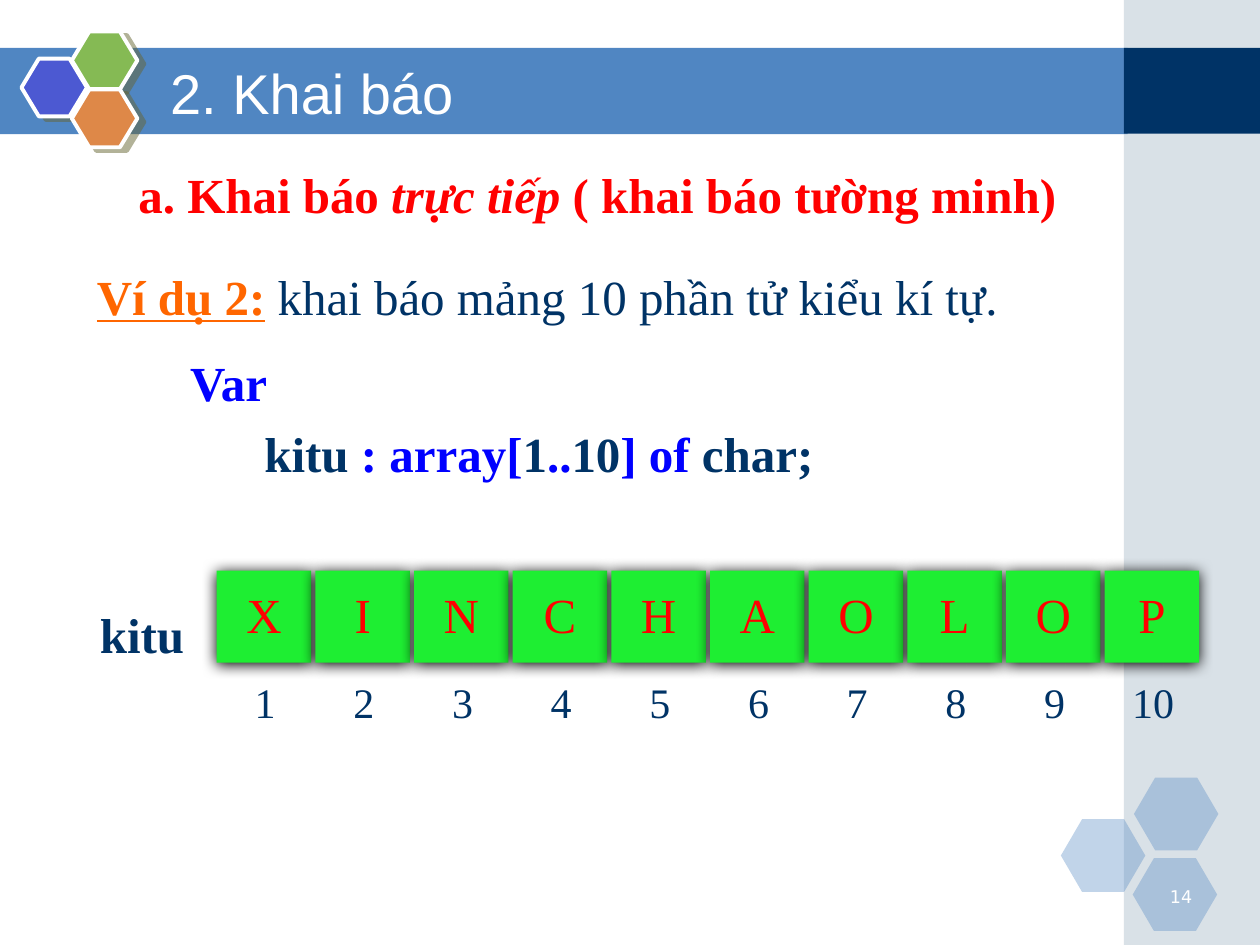
"""Build the slide on direct declaration of a character array."""
from lxml import etree
from pptx import Presentation
from pptx.dml.color import RGBColor
from pptx.enum.shapes import MSO_SHAPE
from pptx.enum.text import MSO_ANCHOR, PP_ALIGN
from pptx.oxml.ns import qn
from pptx.util import Inches, Pt

RECT, HEXAGON, ARROW = MSO_SHAPE.RECTANGLE, MSO_SHAPE.HEXAGON, MSO_SHAPE.RIGHT_ARROW
LEFT, CENTER, RIGHT = PP_ALIGN.LEFT, PP_ALIGN.CENTER, PP_ALIGN.RIGHT
TOP, MIDDLE = MSO_ANCHOR.TOP, MSO_ANCHOR.MIDDLE

WIDTH, HEIGHT = Inches(10), Inches(7.5)
WHITE = RGBColor(0xFF, 0xFF, 0xFF)
NAVY = RGBColor(0x00, 0x33, 0x66)
STEEL = RGBColor(0x50, 0x86, 0xC2)
MIST = RGBColor(0xA0, 0xB5, 0xC4)
INDIGO = RGBColor(0x4C, 0x59, 0xD2)
LEAF = RGBColor(0x85, 0xBA, 0x54)
COPPER = RGBColor(0xDE, 0x88, 0x48)
GREEN = RGBColor(0x1E, 0xEE, 0x32)
RED = RGBColor(0xFF, 0x00, 0x00)
BLUE = RGBColor(0x00, 0x00, 0xFF)
ORANGE = RGBColor(0xFF, 0x66, 0x00)
SERIF = "Times New Roman"

CELL_LEFT, CELL_STEP, CELL_WIDTH, CELL_HEIGHT = 17.2, 7.83, 7.5, 9.73


def area(x, y, w, h):
    """Turn percentages of the slide into a left, top, width, height tuple."""
    return (int(WIDTH * x / 100), int(HEIGHT * y / 100),
            int(WIDTH * w / 100), int(HEIGHT * h / 100))


def add_shadow(sp, color, alpha, blur, dist, angle):
    """Give a shape an outer shadow."""
    effects = sp._element.spPr.find(qn("a:effectLst"))
    shadow = etree.SubElement(effects, qn("a:outerShdw"), blurRad=str(Pt(blur)),
                              dist=str(Pt(dist)), dir=str(angle * 60000),
                              algn="ctr", rotWithShape="0")
    clr = etree.SubElement(shadow, qn("a:srgbClr"), val=str(color))
    etree.SubElement(clr, qn("a:alpha"), val=str(alpha * 1000))


def add_shape(s, kind, box, fill=None, alpha=100, line=None, weight=2.25, adjust=()):
    """Add a preset shape with a plain fill and an optional outline."""
    sp = s.shapes.add_shape(kind, *area(*box))
    sp.shadow.inherit = False
    for i, value in enumerate(adjust):
        sp.adjustments[i] = value
    if fill is None:
        sp.fill.background()
    else:
        sp.fill.solid()
        sp.fill.fore_color.rgb = fill
        if alpha < 100:
            clr = sp._element.spPr.find(qn("a:solidFill"))[0]
            etree.SubElement(clr, qn("a:alpha"), val=str(alpha * 1000))
    if line is None:
        sp.line.fill.background()
    else:
        sp.line.color.rgb = line
        sp.line.width = Pt(weight)
    return sp


def write(p, runs, size, font=SERIF, bold=False, align=LEFT):
    """Fill a paragraph with (text, colour, extra font settings) runs."""
    p.alignment = align
    p.font.size, p.font.name, p.font.bold = Pt(size), font, bold
    for text, color, extra in runs:
        r = p.add_run()
        r.text = text
        r.font.color.rgb = color
        for name, value in extra.items():
            setattr(r.font, name, value)


def add_text(s, box, runs, size, font=SERIF, bold=False, align=LEFT, anchor=TOP):
    """Add a wrapping text box with one paragraph and return its frame."""
    tf = s.shapes.add_textbox(*area(*box)).text_frame
    tf.word_wrap = True
    tf.vertical_anchor = anchor
    write(tf.paragraphs[0], runs, size, font, bold, align)
    return tf


def add_backdrop(s):
    """Draw the header bar, side band and both hexagon clusters."""
    add_shape(s, RECT, (0, 5.07, 89.5, 9.13), STEEL)
    add_shape(s, RECT, (89.2, 0, 10.8, 100), MIST, alpha=40)
    add_shape(s, RECT, (89.2, 5.07, 10.8, 9.07), NAVY)
    for x, y in ((84.2, 86.67), (90, 82.27), (89.9, 90.8)):
        add_shape(s, HEXAGON, (x, y, 6.7, 7.73), STEEL, alpha=35, adjust=(0.29, 1.15))
    for x, y, fill in ((1.7, 6.2, INDIGO), (5.7, 3.33, LEAF), (5.7, 9.47, COPPER)):
        sp = add_shape(s, HEXAGON, (x, y, 5.2, 6.13), fill, line=WHITE, adjust=(0.3, 1.15))
        add_shadow(sp, RGBColor(0x66, 0x66, 0x33), 50, 0, 4.5, 27)


def add_title(s):
    """Format the title placeholder and bring it in front of the header bar."""
    title = s.shapes.title
    title.left, title.top, title.width, title.height = area(12.5, 5.6, 73.3, 8.27)
    title.text_frame.vertical_anchor = MIDDLE
    write(title.text_frame.paragraphs[0], [("2. Khai báo", WHITE, {})], 32, "Arial")
    title._element.getparent().append(title._element)


def add_declaration(s):
    """Write the Pascal declaration with its indented second line."""
    tf = add_text(s, (14.1, 36.67, 68.8, 17.6), [("Var", BLUE, {})], 28, bold=True)
    p = tf.add_paragraph()
    p._p.get_or_add_pPr().set("indent", str(Inches(0.59)))
    p.space_before = Pt(7)
    parts = (("kitu ", NAVY), (": array[", BLUE), ("1", NAVY), ("..", BLUE),
             ("10", NAVY), ("] of", BLUE), (" char;", NAVY))
    write(p, [(text, color, {}) for text, color in parts], 28, bold=True)


def add_array(s, letters):
    """Draw one cell per letter, with its index underneath."""
    for i, letter in enumerate(letters):
        x = CELL_LEFT + i * CELL_STEP
        sp = add_shape(s, RECT, (x, 60.4, CELL_WIDTH, CELL_HEIGHT), GREEN)
        add_shadow(sp, RGBColor(0, 0, 0), 100, 8.5, 1, 90)
    for i, letter in enumerate(letters):
        x = CELL_LEFT + i * CELL_STEP
        add_text(s, (x, 60.13, CELL_WIDTH, CELL_HEIGHT), [(letter, RED, {})], 28,
                 align=CENTER, anchor=MIDDLE)
        add_text(s, (x + 0.1, 70.53, CELL_WIDTH, 7.47), [(str(i + 1), NAVY, {})], 24,
                 align=CENTER, anchor=MIDDLE)


def main():
    """Build and save the slide."""
    prs = Presentation()
    prs.slide_width, prs.slide_height = WIDTH, HEIGHT
    s = prs.slides.add_slide(prs.slide_layouts[5])
    add_backdrop(s)
    add_declaration(s)
    arrow = add_shape(s, ARROW, (6.7, 26, 78.2, 10.67), line=WHITE, weight=2,
                      adjust=(0.7, 0.23))
    arrow.text_frame.vertical_anchor = MIDDLE
    write(arrow.text_frame.paragraphs[0],
          [("Ví dụ 2:", ORANGE, {"bold": True, "underline": True}),
           (" khai báo mảng 10 phần tử kiểu kí tự.", NAVY, {})], 28)
    add_text(s, (4.2, 63.33, 11.4, 7.6), [("kitu", NAVY, {})], 28, bold=True, align=RIGHT)
    add_array(s, "XINCHAOLOP")
    add_text(s, (10, 16.8, 81, 7.6),
             [("a. Khai báo ", RED, {}), ("trực tiếp", RED, {"italic": True}),
              (" ( khai báo tường minh)", RED, {})], 28, bold=True)
    add_title(s)
    add_text(s, (90.6, 93.07, 5, 3.33), [("14", WHITE, {})], 10, "DejaVu Sans", align=RIGHT)
    prs.save("out.pptx")


if __name__ == "__main__":
    main()
